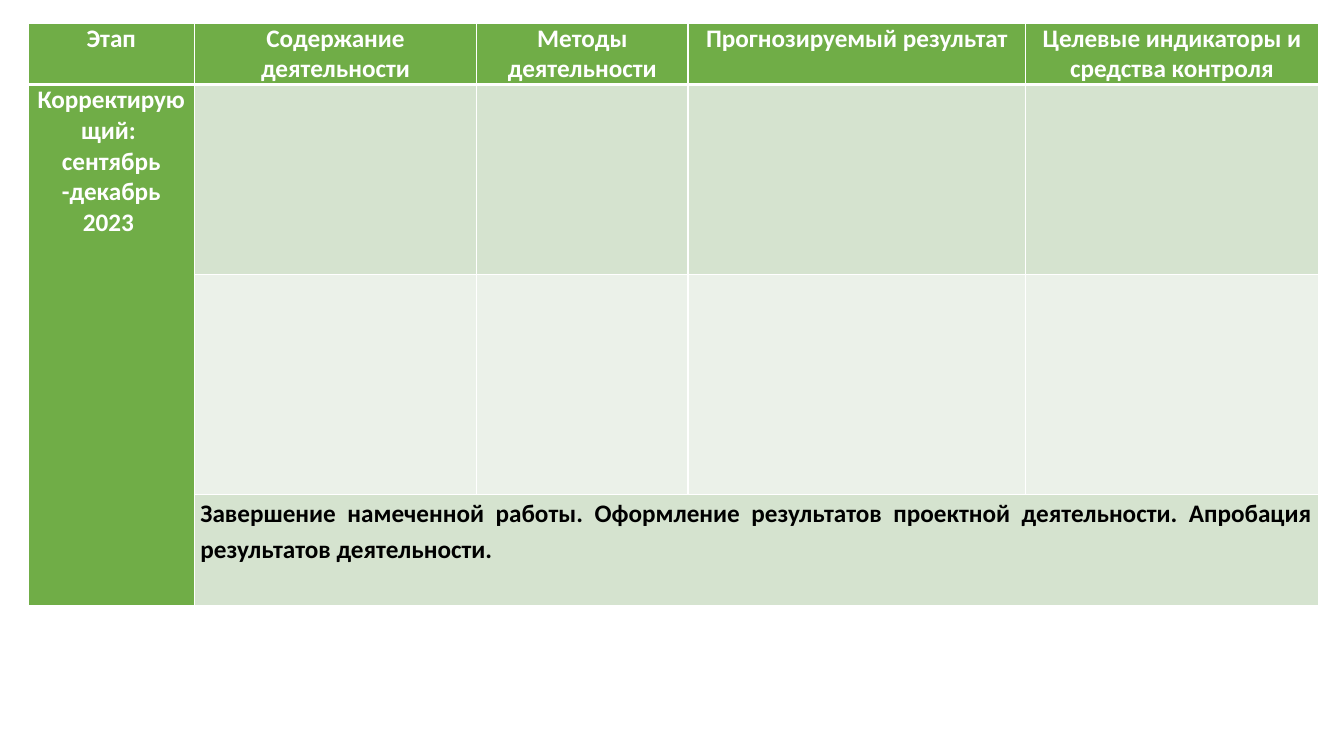
from lxml import etree
from pptx import Presentation
from pptx.dml.color import RGBColor
from pptx.enum.text import PP_ALIGN as Align
from pptx.oxml.ns import qn
from pptx.util import Cm, Pt

GREEN, PALE, PALEST = "70AD47", "D5E3CF", "EBF1E9"
WHITE, BLACK = "FFFFFF", "000000"
COLUMN_WIDTHS = [4.19, 7.11, 5.33, 8.51, 7.37]
ROW_HEIGHTS = [1.42, 4.78, 5.54, 2.82]
HEADINGS = ["Этап", "Содержание деятельности", "Методы деятельности",
            "Прогнозируемый результат", "Целевые индикаторы и средства контроля"]
STAGE = ["Корректирующий: ", "сентябрь -декабрь 2023 "]
SUMMARY = ("Завершение намеченной работы. Оформление результатов проектной "
           "деятельности. Апробация результатов деятельности.")


def style_cell(cell, fill, top, bottom):
    """Fill the cell and give it white borders; top and bottom are widths in points."""
    cell.fill.solid()
    cell.fill.fore_color.rgb = RGBColor.from_string(fill)
    properties = cell._tc.get_or_add_tcPr()
    borders = [("a:lnL", 1), ("a:lnR", 1), ("a:lnT", top), ("a:lnB", bottom)]
    for position, (tag, width) in enumerate(borders):
        line = etree.Element(qn(tag), w=str(Pt(width)))
        solid = etree.SubElement(line, qn("a:solidFill"))
        etree.SubElement(solid, qn("a:srgbClr"), val=WHITE)
        properties.insert(position, line)


def write_cell(cell, texts, color, alignment=Align.CENTER, margin=0.18, spacing=None):
    cell.margin_left = cell.margin_right = Cm(margin)
    cell.margin_top = cell.margin_bottom = Cm(0)
    frame = cell.text_frame
    for index, text in enumerate(texts):
        paragraph = frame.add_paragraph() if index else frame.paragraphs[0]
        paragraph.alignment = alignment
        paragraph.line_spacing = spacing
        run = paragraph.add_run()
        run.text = text
        run.font.name = "Calibri"
        run.font.size = Pt(18)
        run.font.bold = True
        run.font.color.rgb = RGBColor.from_string(color)


presentation = Presentation()
presentation.slide_width, presentation.slide_height = Cm(33.87), Cm(19.05)
slide = presentation.slides.add_slide(presentation.slide_layouts[6])

table = slide.shapes.add_table(
    len(ROW_HEIGHTS), len(COLUMN_WIDTHS), Cm(0.71), Cm(0.58),
    Cm(sum(COLUMN_WIDTHS)), Cm(sum(ROW_HEIGHTS))).table
for column, width in zip(table.columns, COLUMN_WIDTHS):
    column.width = Cm(width)
for row, height in zip(table.rows, ROW_HEIGHTS):
    row.height = Cm(height)

for row_index, row_fill in enumerate([GREEN, PALE, PALEST, PALE]):
    for column_index in range(len(COLUMN_WIDTHS)):
        style_cell(table.cell(row_index, column_index),
                   GREEN if column_index == 0 else row_fill,
                   top=3 if row_index == 1 else 1,
                   bottom=3 if row_index == 0 else 1)

table.cell(1, 0).merge(table.cell(3, 0))
table.cell(3, 1).merge(table.cell(3, 4))

for column_index, heading in enumerate(HEADINGS):
    write_cell(table.cell(0, column_index), [heading], WHITE)
write_cell(table.cell(1, 0), STAGE, WHITE)
write_cell(table.cell(3, 1), [SUMMARY], BLACK, Align.JUSTIFY, margin=0.15, spacing=1.15)

presentation.save("out.pptx")
